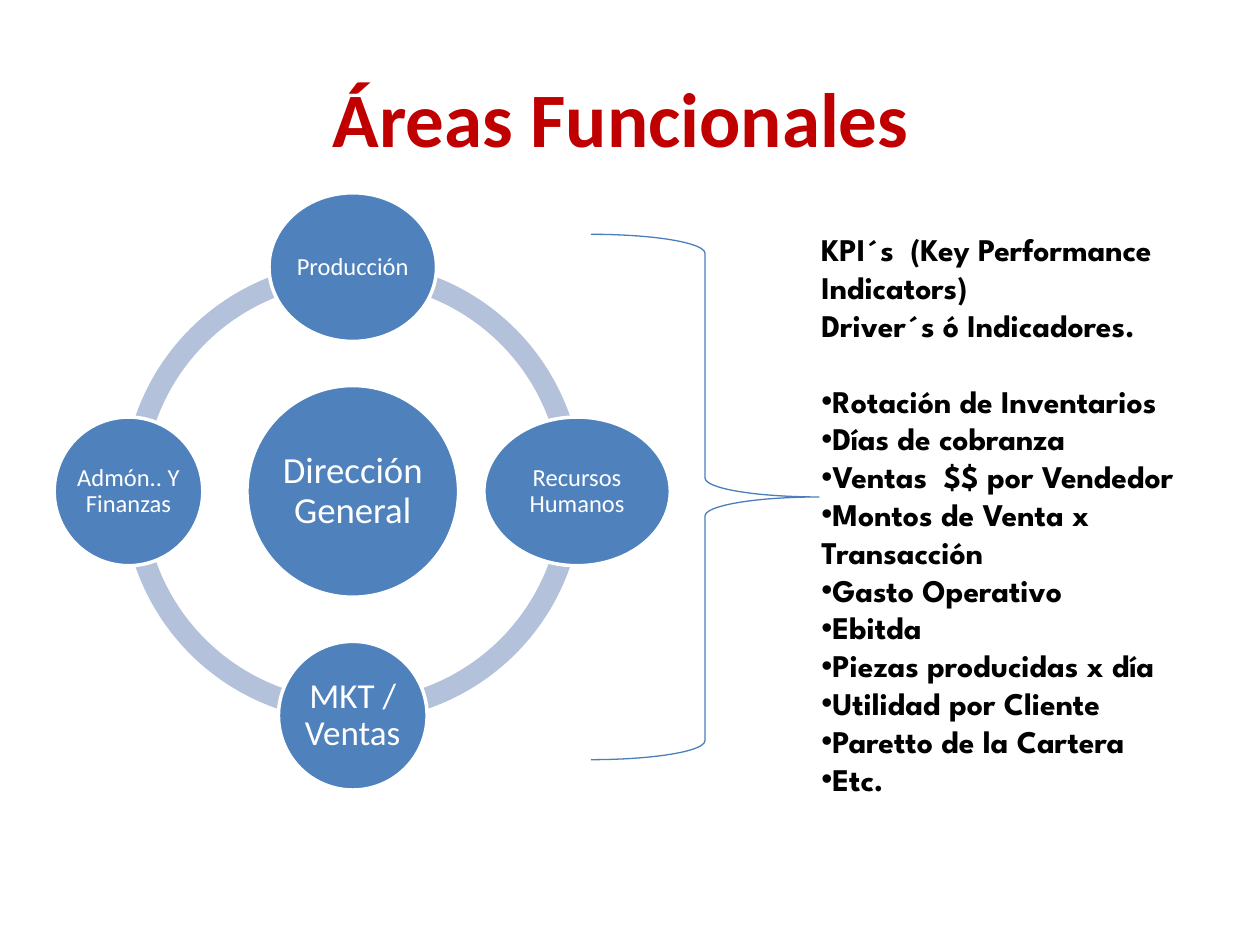
import pptx
import pptx.util
import pptx.dml.color
import pptx.enum.shapes
import pptx.enum.text
import pptx.oxml
import pptx.oxml.ns
import lxml.etree

Inches = pptx.util.Inches
Pt = pptx.util.Pt
SHAPE = pptx.enum.shapes.MSO_SHAPE
ALIGN = pptx.enum.text.PP_ALIGN
ANCHOR = pptx.enum.text.MSO_ANCHOR

TITLE = "Áreas Funcionales "
CENTER_X, CENTER_Y, ORBIT, RING = 2.8, 3.9, 1.78, 3.65
AREAS = [
    ("Dirección General", 0, 0, 1.68, 1.68, 21),
    ("Producción", 0, -1, 1.33, 1.18, 14),
    ("Recursos Humanos", 1, 0, 1.48, 1.18, 14),
    ("MKT / Ventas", 0, 1, 1.18, 1.18, 20),
    ("Admón.. Y Finanzas", -1, 0, 1.18, 1.18, 14),
]
HEADINGS = ["KPI´s  (Key Performance Indicators)", "Driver´s ó Indicadores."]
INDICATORS = [
    "Rotación de Inventarios",
    "Días de cobranza",
    "Ventas  $$ por Vendedor",
    "Montos de Venta x Transacción",
    "Gasto Operativo",
    "Ebitda",
    "Piezas producidas x día",
    "Utilidad por Cliente",
    "Paretto de la Cartera",
    "Etc.",
]


def rgb(value):
    return pptx.dml.color.RGBColor.from_string(value)


def add_run(p, text, size, font, color, bold=False):
    r = p.add_run()
    r.text = text
    r.font.size = Pt(size)
    r.font.name = font
    r.font.bold = bold
    r.font.color.rgb = rgb(color)


def add_shape(s, kind, x, y, w, h, fill=None, line=None, width=0):
    sp = s.shapes.add_shape(kind, Inches(x), Inches(y), Inches(w), Inches(h))
    sp.shadow.inherit = False
    if fill:
        sp.fill.solid()
        sp.fill.fore_color.rgb = rgb(fill)
    else:
        sp.fill.background()
    if line:
        sp.line.color.rgb = rgb(line)
        sp.line.width = Pt(width)
    else:
        sp.line.fill.background()
    return sp


def add_area(s, text, dx, dy, w, h, size):
    x = CENTER_X + dx * ORBIT - w / 2
    y = CENTER_Y + dy * ORBIT - h / 2
    sp = add_shape(s, SHAPE.OVAL, x, y, w, h, "4F81BD", "FFFFFF", 2)
    tf = sp.text_frame
    tf.word_wrap = True
    tf.vertical_anchor = ANCHOR.MIDDLE
    tf.margin_left = tf.margin_right = tf.margin_top = tf.margin_bottom = 0
    p = tf.paragraphs[0]
    p.alignment = ALIGN.CENTER
    p.line_spacing = 0.9
    add_run(p, text, size, "Calibri", "FFFFFF")


def add_bullet(p):
    pPr = p._p.get_or_add_pPr()
    ns = pptx.oxml.ns.qn
    lxml.etree.SubElement(pPr, ns("a:buFont")).set("typeface", "Arial")
    lxml.etree.SubElement(pPr, ns("a:buChar")).set("char", "•")


def add_indicators(s):
    tb = s.shapes.add_textbox(Inches(6.42), Inches(1.78), Inches(3.35), Inches(4.95))
    tf = tb.text_frame
    tf.word_wrap = True
    for i, text in enumerate(HEADINGS + INDICATORS):
        p = tf.add_paragraph() if i else tf.paragraphs[0]
        if i >= len(HEADINGS):
            add_bullet(p)
        if i == len(HEADINGS):
            p.space_before = Pt(21.6)
        add_run(p, text, 18, "League Spartan", "000000", True)


def main():
    prs = pptx.Presentation()
    prs.slide_width, prs.slide_height = Inches(10), Inches(7.5)
    s = prs.slides.add_slide(prs.slide_layouts[5])

    title = s.shapes.title
    title.left, title.top = Inches(0.5), Inches(0.3)
    title.width, title.height = Inches(9), Inches(1.25)
    p = title.text_frame.paragraphs[0]
    p.alignment = ALIGN.CENTER
    add_run(p, TITLE, 44, "Calibri", "C00000", True)

    for start in range(0, 216, 54):
        arc = add_shape(s, SHAPE.BLOCK_ARC, CENTER_X - RING / 2, CENTER_Y - RING / 2,
                        RING, RING, "B3C1DB")
        for i, value in enumerate((start, (start + 54) % 216, 0.046)):
            arc.adjustments[i] = value
    for area in AREAS:
        add_area(s, *area)

    add_shape(s, SHAPE.RIGHT_BRACE, 4.69, 1.86, 1.81, 4.17, None, "4B7EBC", 0.75)
    add_indicators(s)
    prs.save("out.pptx")


if __name__ == "__main__":
    main()
